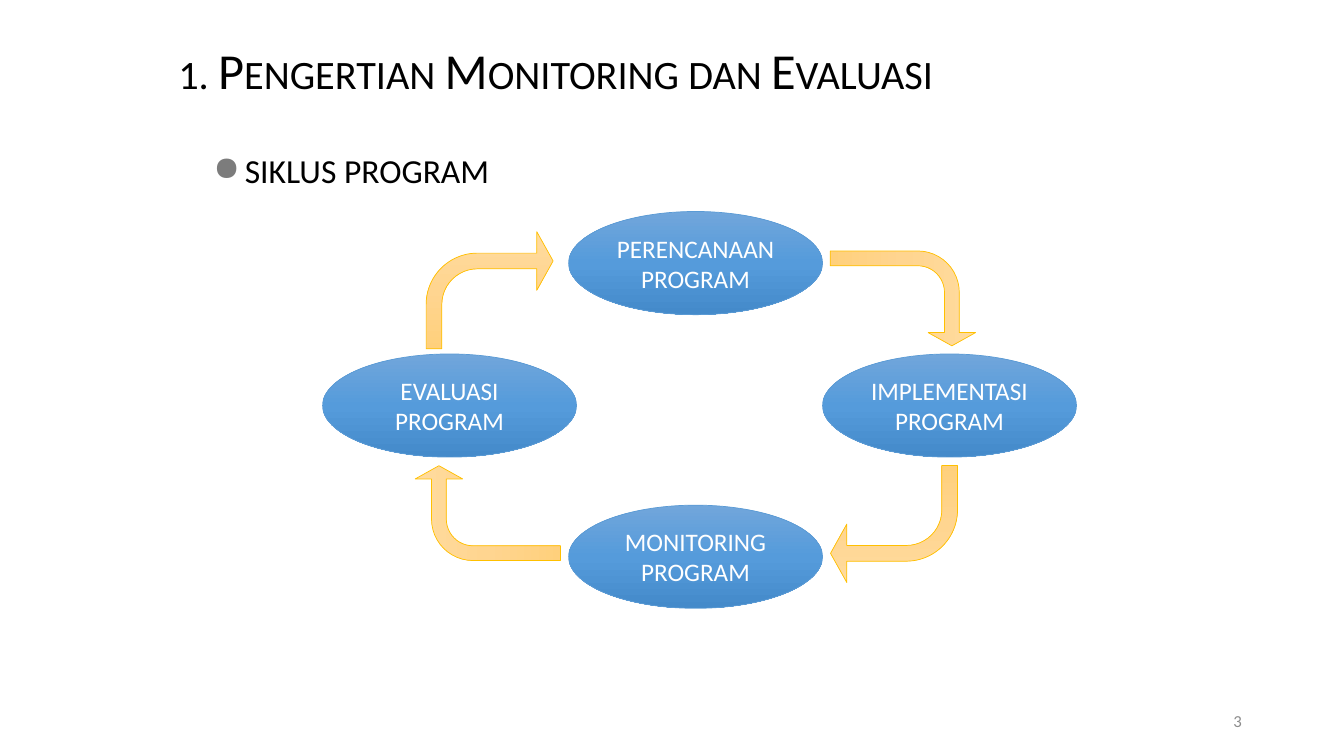
import copy

import pptx
import pptx.dml.color
import pptx.enum.shapes
import pptx.enum.text
import pptx.oxml
import pptx.oxml.ns
import pptx.util

Cm, Pt = pptx.util.Cm, pptx.util.Pt
Align = pptx.enum.text.PP_ALIGN
Anchor = pptx.enum.text.MSO_ANCHOR
Preset = pptx.enum.shapes.MSO_SHAPE

COLOURS = {
    "text": "000000", "light": "FFFFFF", "number": "8C8C8C", "bullet": "7C7C7C",
    "stage line": "5B9BD5", "arrow line": "FFC000",
}
GRADIENTS = {
    "stage": ("71A6DB", "559BDB", "448ACA"),
    "arrow": ("FFDB9E", "FFD590", "FFD07C"),
}


def rgb(value):
    return pptx.dml.color.RGBColor.from_string(value)


class CyclePage:
    font = "Calibri"

    def __init__(self, deck):
        self.page = deck.slides.add_slide(deck.slide_layouts[5])

    def fill_text(self, box, text, size, colour, align=Align.LEFT, anchor=Anchor.MIDDLE):
        frame = box.text_frame
        frame.word_wrap = True
        frame.auto_size = pptx.enum.text.MSO_AUTO_SIZE.NONE
        frame.vertical_anchor = anchor
        para = frame.paragraphs[0]
        para.text = text
        para.alignment = align
        para.font.name = self.font
        para.font.size = Pt(size)
        para.font.color.rgb = rgb(COLOURS[colour])
        return para

    def title(self, text, left, top, width, height):
        box = self.page.shapes.title
        box.left, box.top, box.width, box.height = map(Cm, (left, top, width, height))
        para = self.fill_text(box, text, 36, "text")
        para.line_spacing = 0.9
        para.font._element.set("cap", "small")

    def text(self, text, left, top, width, height, size, colour, **layout):
        box = self.page.shapes.add_textbox(*map(Cm, (left, top, width, height)))
        return self.fill_text(box, text, size, colour, **layout)

    def bullet(self, text, left, top, width, height):
        para = self.text(text, left, top, width, height, 24, "text", anchor=Anchor.TOP)
        para.line_spacing = 1.25
        para.space_after = Pt(9)
        properties = para._p.get_or_add_pPr()
        properties.set("marL", str(Cm(0.79)))
        properties.set("indent", str(Cm(-0.79)))
        namespace = pptx.oxml.ns.nsdecls("a")
        for xml in (
            f'<a:buClr {namespace}><a:srgbClr val="{COLOURS["bullet"]}"/></a:buClr>',
            f'<a:buChar {namespace} char="●"/>',
        ):
            para.font._element.addprevious(pptx.oxml.parse_xml(xml))

    def shape(self, preset, kind, left, top, width, height):
        shape = self.page.shapes.add_shape(preset, *map(Cm, (left, top, width, height)))
        shape.shadow.inherit = False
        shape.line.color.rgb = rgb(COLOURS[f"{kind} line"])
        shape.line.width = Pt(0.5)
        shape.fill.gradient()
        shape.fill.gradient_angle = 270
        # A new gradient has two stops; the middle one is added here
        first = shape.element.spPr.find(".//" + pptx.oxml.ns.qn("a:gs"))
        middle = copy.deepcopy(first)
        middle.set("pos", "50000")
        first.addnext(middle)
        for stop, colour in zip(shape.fill.gradient_stops, GRADIENTS[kind]):
            stop.color.rgb = rgb(colour)
        return shape

    def stage(self, text, left, top):
        shape = self.shape(Preset.OVAL, "stage", left, top, 6.4, 2.6)
        self.fill_text(shape, text, 18, "light", Align.CENTER)

    def arrow(self, left, top, width, height, rotation, thickness):
        shape = self.shape(Preset.BENT_ARROW, "arrow", left, top, width, height)
        shape.rotation = rotation
        for index, value in enumerate((thickness, 0.25, 0.139, 0.438)):
            shape.adjustments[index] = value


def main():
    deck = pptx.Presentation()
    deck.slide_width, deck.slide_height = Cm(33.87), Cm(19.05)
    page = CyclePage(deck)

    # Heading, topic and page number
    page.title("1. Pengertian Monitoring dan Evaluasi", 4.24, 0.74, 25.48, 2.21)
    page.bullet("SIKLUS PROGRAM", 5.13, 3.4, 23.2, 1.55)
    page.text("3", 23.93, 17.65, 7.62, 1.02, 12, "number", align=Align.RIGHT)

    # Stages of the cycle, clockwise from the top
    for text, left, top in (
        ("PERENCANAAN PROGRAM", 14.33, 5.33),
        ("IMPLEMENTASI\vPROGRAM", 20.73, 8.92),
        ("MONITORING PROGRAM", 14.33, 12.73),
        ("EVALUASI PROGRAM", 8.13, 8.92),
    ):
        page.stage(text, left, top)

    # Arrows: narrow ones leave top and bottom, wide ones leave the sides
    narrow, wide = (2.39, 3.66), (3.2, 2.95)
    for left, top, size, rotation, thickness in (
        (21.56, 5.69, narrow, 90, 0.156),
        (20.93, 11.73, wide, 180, 0.134),
        (11.1, 11.1, narrow, 270, 0.156),
        (10.74, 5.84, wide, 0, 0.134),
    ):
        page.arrow(left, top, *size, rotation, thickness)

    deck.save("out.pptx")


if __name__ == "__main__":
    main()
